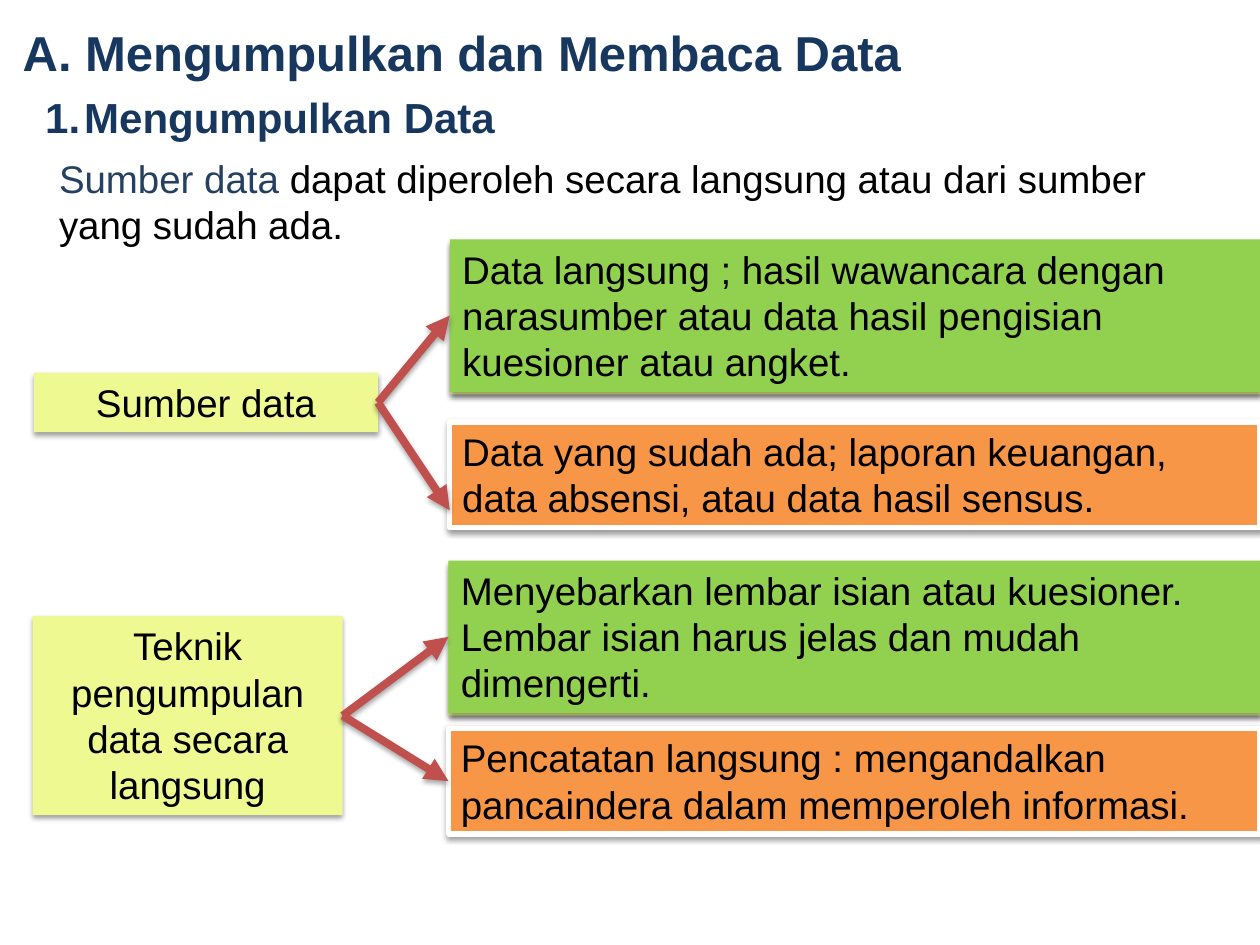
from lxml import etree
from pptx import Presentation
from pptx.dml.color import RGBColor
from pptx.enum.shapes import MSO_CONNECTOR as CONN, MSO_SHAPE as SHAPE
from pptx.enum.text import MSO_ANCHOR as ANCHOR, PP_ALIGN as ALIGN
from pptx.oxml.ns import qn
from pptx.util import Inches, Pt

NAVY, BLACK, WHITE = "17375E", "000000", "FFFFFF"
YELLOW, GREEN, ORANGE, RED = "EFF991", "92D050", "F79646", "C0504D"

TITLE = "A. Mengumpulkan dan Membaca Data"
SUBTITLE = "Mengumpulkan Data"
INTRO = [("Sumber data ", "254061"),
         ("dapat diperoleh secara langsung atau dari sumber yang sudah ada.", BLACK)]
GROUPS = [
    {"source": ("Sumber data", (0.27, 2.96, 2.73, 0.47)),
     "direct": (["Data langsung ; hasil wawancara dengan narasumber atau data hasil "
                 "pengisian kuesioner atau angket."], (3.57, 1.9, 6.43, 1.21)),
     "other": (["Data yang sudah ada; laporan keuangan, data absensi, atau data hasil "
                "sensus."], (3.57, 3.35, 6.43, 0.84)),
     "low_end": (3.57, 4.05)},
    {"source": ("Teknik pengumpulan data secara langsung", (0.26, 4.89, 2.46, 1.58)),
     "direct": (["Menyebarkan lembar isian atau kuesioner. Lembar isian harus jelas dan "
                 "mudah dimengerti."], (3.56, 4.45, 6.44, 1.21)),
     "other": (["Pencatatan langsung : mengandalkan",
                "pancaindera dalam memperoleh informasi."], (3.56, 5.78, 6.44, 0.84)),
     "low_end": None},
]


def rgb(value):
    return RGBColor.from_string(value)


def add_run(p, text, color=BLACK, **fmt):
    r = p.add_run()
    r.text = text
    for key, value in {"name": "Arial", "size": Pt(22), "bold": False, **fmt}.items():
        setattr(r.font, key, value)
    r.font.color.rgb = rgb(color)


def set_frame(tf, wrap=True):
    for key, value in {"word_wrap": wrap, "vertical_anchor": ANCHOR.TOP,
                       "margin_left": Inches(0.1), "margin_right": Inches(0.1),
                       "margin_top": Inches(0.05), "margin_bottom": Inches(0.05)}.items():
        setattr(tf, key, value)


def add_shadow(sp, alpha, dist):
    props = sp._element.spPr
    effects = props.find(qn("a:effectLst"))
    if effects is None:
        effects = etree.SubElement(props, qn("a:effectLst"))
    shadow = etree.SubElement(effects, qn("a:outerShdw"), blurRad=str(Pt(3.1)),
                              dist=str(Pt(dist)), dir="5400000", rotWithShape="0")
    color = etree.SubElement(shadow, qn("a:srgbClr"), val=BLACK)
    etree.SubElement(color, qn("a:alpha"), val=str(alpha * 1000))


def add_box(s, box, fill, paragraphs=(), align=ALIGN.LEFT, border=False, shadow=True):
    sp = s.shapes.add_shape(SHAPE.RECTANGLE, *map(Inches, box))
    sp.fill.solid()
    sp.fill.fore_color.rgb = rgb(fill)
    if border:
        sp.line.color.rgb = rgb(WHITE)
        sp.line.width = Pt(3)
    else:
        sp.line.fill.background()
    sp.shadow.inherit = False
    if shadow:
        add_shadow(sp, 38, 1.6)
    tf = sp.text_frame
    set_frame(tf)
    for i, runs in enumerate(paragraphs):
        p = tf.add_paragraph() if i else tf.paragraphs[0]
        p.alignment = align
        for run in runs:
            add_run(p, *run)
    return sp


def add_arrow(s, source, target, end=None):
    x, y = map(Inches, end or (0, 0))
    line = s.shapes.add_connector(CONN.STRAIGHT, 0, 0, x, y)
    line.begin_connect(source, 3)
    if end is None:
        line.end_connect(target, 1)
    line.line.color.rgb = rgb(RED)
    line.line.width = Pt(4.5)
    etree.SubElement(line.line._get_or_add_ln(), qn("a:tailEnd"), type="triangle")
    add_shadow(line, 35, 1.8)


def add_group(s, group):
    name, box = group["source"]
    source = add_box(s, box, YELLOW, [[(name,)]], ALIGN.CENTER)
    lines, (x, y, w, h) = group["direct"]
    add_box(s, (x, y + 0.02, w, h), YELLOW)
    direct = add_box(s, (x, y, w, h), GREEN, [[(t,)] for t in lines])
    lines, box = group["other"]
    other = add_box(s, box, ORANGE, [[(t,)] for t in lines], border=True)
    add_arrow(s, source, direct)
    add_arrow(s, source, other, group["low_end"])


def add_headings(s):
    title = s.shapes.title
    for key, value in zip(("left", "top", "width", "height"), (0.08, 0.13, 8.39, 0.57)):
        setattr(title, key, Inches(value))
    set_frame(title.text_frame)
    p = title.text_frame.paragraphs[0]
    p.alignment = ALIGN.LEFT
    add_run(p, TITLE, NAVY, size=Pt(28), bold=True)

    sub = s.shapes.add_textbox(*map(Inches, (0.08, 0.68, 3.99, 0.5)))
    set_frame(sub.text_frame, wrap=False)
    p = sub.text_frame.paragraphs[0]
    props = p._p.get_or_add_pPr()
    props.set("marL", str(Inches(0.49)))
    props.set("indent", str(Inches(-0.31)))
    etree.SubElement(props, qn("a:buFont"), typeface="+mj-lt")
    etree.SubElement(props, qn("a:buAutoNum"), type="arabicPeriod")
    add_run(p, SUBTITLE, NAVY, size=Pt(24), bold=True)


def main():
    prs = Presentation()
    prs.slide_width, prs.slide_height = Inches(10), Inches(7.5)
    s = prs.slides.add_slide(prs.slide_layouts[5])
    add_headings(s)
    add_box(s, (0.37, 1.18, 9.51, 0.84), WHITE, [INTRO], shadow=False)
    for group in GROUPS:
        add_group(s, group)
    prs.save("out.pptx")


if __name__ == "__main__":
    main()
